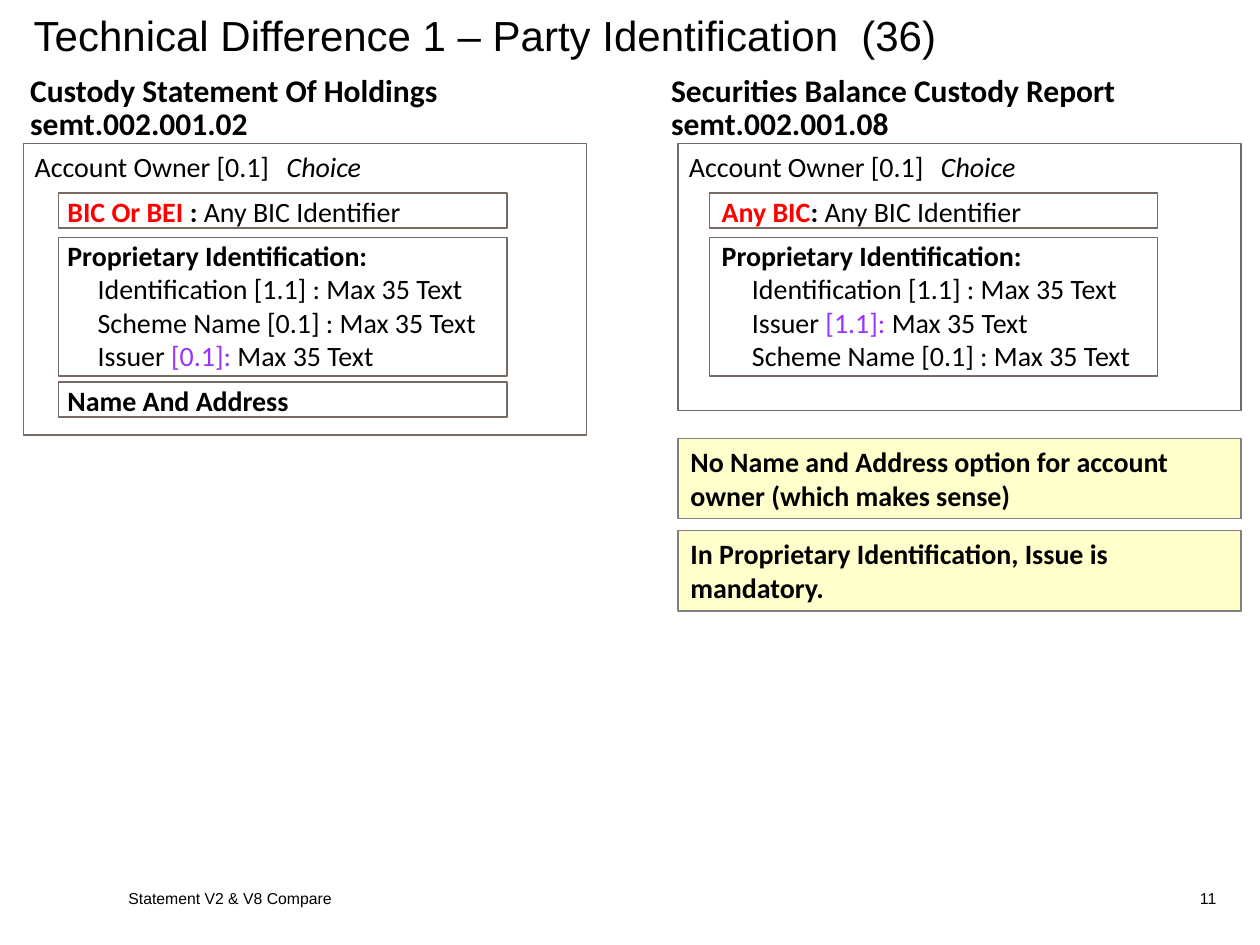
from lxml import etree
from pptx import Presentation
from pptx.dml.color import RGBColor
from pptx.enum.shapes import MSO_SHAPE as Shape
from pptx.enum.text import MSO_ANCHOR as Anchor, PP_ALIGN as Align
from pptx.oxml.ns import qn
from pptx.util import Cm, Pt

BLACK = RGBColor(0x00, 0x00, 0x00)
RED = RGBColor(0xFF, 0x00, 0x00)
VIOLET = RGBColor(0x99, 0x33, 0xFF)
BROWN = RGBColor(0x76, 0x6A, 0x62)
GREY = RGBColor(0x80, 0x80, 0x80)
CREAM = RGBColor(0xFF, 0xFF, 0xCC)

PANEL_WIDTH = 11.35
OPTION_INDENT = 0.66
DETAIL_INDENT = 1.27
CHOICE_TAB = 5.08


def add_run(paragraph, text, size, font="Calibri", color=BLACK, bold=False, italic=False):
    """Append one formatted run."""
    run = paragraph.add_run()
    run.text = text
    run.font.name = font
    run.font.size = Pt(size)
    run.font.color.rgb = color
    run.font.bold = bold
    run.font.italic = italic


def add_text_frame(slide, left, top, width, height, anchor=Anchor.TOP):
    """Add a wrapping text box and return its frame."""
    frame = slide.shapes.add_textbox(Cm(left), Cm(top), Cm(width), Cm(height)).text_frame
    frame.word_wrap = True
    frame.vertical_anchor = anchor
    return frame


def next_paragraph(frame, index):
    """Return the first paragraph, or a new one after it."""
    return frame.add_paragraph() if index else frame.paragraphs[0]


def add_label(slide, left, top, width, height, text, size, align=Align.LEFT):
    """Add a single Arial line centred vertically in its box."""
    frame = add_text_frame(slide, left, top, width, height, Anchor.MIDDLE)
    frame.paragraphs[0].alignment = align
    add_run(frame.paragraphs[0], text, size, "Arial")


def add_box(slide, left, top, width, height, line=BROWN, fill=None):
    """Add an outlined rectangle, filled when a colour is given."""
    box = slide.shapes.add_shape(Shape.RECTANGLE, Cm(left), Cm(top), Cm(width), Cm(height))
    box.shadow.inherit = False
    box.line.color.rgb = line
    box.line.width = Pt(0.75)
    if fill is None:
        box.fill.background()
    else:
        box.fill.solid()
        box.fill.fore_color.rgb = fill
    return box


def add_heading(slide, left, top, lines):
    """Add the message name above a panel."""
    frame = add_text_frame(slide, left, top, 9.6, 1.6)
    for index, text in enumerate(lines):
        paragraph = next_paragraph(frame, index)
        paragraph.line_spacing = Pt(19)
        add_run(paragraph, text, 18, bold=True)


def add_owner_panel(slide, left, top, height, option_offset, option_boxes, entries):
    """Add the account owner frame with its option boxes and entries."""
    add_box(slide, left, top, PANEL_WIDTH, height)
    frame = add_text_frame(slide, left - 0.03, top, 9.8, height - 0.2)
    owner = (0, 6, [("Account Owner [0.1]\t", {}), ("Choice", {"italic": True})])
    for index, (indent, space_after, runs) in enumerate([owner] + entries):
        paragraph = next_paragraph(frame, index)
        properties = paragraph._p.get_or_add_pPr()
        properties.set("marL", str(Cm(indent)))
        properties.set("indent", "0")
        if not indent:
            tabs = etree.SubElement(properties, qn("a:tabLst"))
            etree.SubElement(tabs, qn("a:tab"), pos=str(Cm(CHOICE_TAB)), algn="l")
        paragraph.space_after = Pt(space_after)
        for text, style in runs:
            add_run(paragraph, text, 16, **style)
    for option_top, option_height in option_boxes:
        add_box(slide, left + option_offset, top + option_top, 9.04, option_height)


def add_remarks(slide, left, top, remarks):
    """Stack the remark boxes downwards."""
    for index, text in enumerate(remarks):
        box = add_box(slide, left, top + index * 1.86, PANEL_WIDTH, 1.62, GREY, CREAM)
        frame = box.text_frame
        frame.word_wrap = True
        frame.vertical_anchor = Anchor.TOP
        frame.paragraphs[0].alignment = Align.LEFT
        add_run(frame.paragraphs[0], text, 16, bold=True)


def bic_entry(name, colon):
    """Describe the BIC option."""
    return (OPTION_INDENT, 6, [(name, {"color": RED, "bold": True}),
                               (colon, {"bold": True}), ("Any BIC Identifier", {})])


def title_entry(text):
    """Describe a bold option name."""
    return (OPTION_INDENT, 0, [(text, {"bold": True})])


def detail_entry(text):
    """Describe a detail of the proprietary identification."""
    return (DETAIL_INDENT, 0, [(text, {})])


def issuer_entry(occurrence, space_after):
    """Describe the issuer with its occurrence highlighted."""
    return (DETAIL_INDENT, space_after, [("Issuer ", {}), (occurrence, {"color": VIOLET}),
                                         ("Max 35 Text", {})])


def main():
    """Build and save the slide."""
    deck = Presentation()
    deck.slide_width, deck.slide_height = Cm(25.4), Cm(19.05)
    slide = deck.slides.add_slide(deck.slide_layouts[6])

    add_label(slide, 0.43, 0, 24.7, 1.42,
              "Technical Difference 1 – Party Identification  (36)", 24)
    add_label(slide, 2.34, 17.78, 15.77, 0.64, "Statement V2 & V8 Compare", 9)
    add_label(slide, 22.66, 17.78, 2.11, 0.64, "11", 9, Align.RIGHT)

    left, right, top = 0.48, 13.67, 2.9
    proprietary = title_entry("Proprietary Identification:")
    identification = detail_entry("Identification [1.1] : Max 35 Text")
    scheme = detail_entry("Scheme Name [0.1] : Max 35 Text")
    bic_box, proprietary_box, address_box = (0.99, 0.71), (1.89, 2.79), (4.8, 0.71)

    add_heading(slide, 0.36, 1.4, ["Custody Statement Of Holdings", "semt.002.001.02"])
    add_owner_panel(slide, left, top, 5.87, 0.7, [bic_box, proprietary_box, address_box],
                    [bic_entry("BIC Or BEI ", ": "), proprietary, identification, scheme,
                     issuer_entry("[0.1]: ", 6), title_entry("Name And Address")])

    add_heading(slide, 13.28, 1.4, ["Securities Balance Custody Report", "semt.002.001.08"])
    add_owner_panel(slide, right, top, 5.38, 0.63, [bic_box, proprietary_box],
                    [bic_entry("Any BIC", ": "), proprietary, identification,
                     issuer_entry("[1.1]: ", 0), scheme])
    add_remarks(slide, right, 8.84,
                ["No Name and Address option for account owner (which makes sense)",
                 "In Proprietary Identification, Issue is mandatory."])

    deck.save("out.pptx")


if __name__ == "__main__":
    main()
